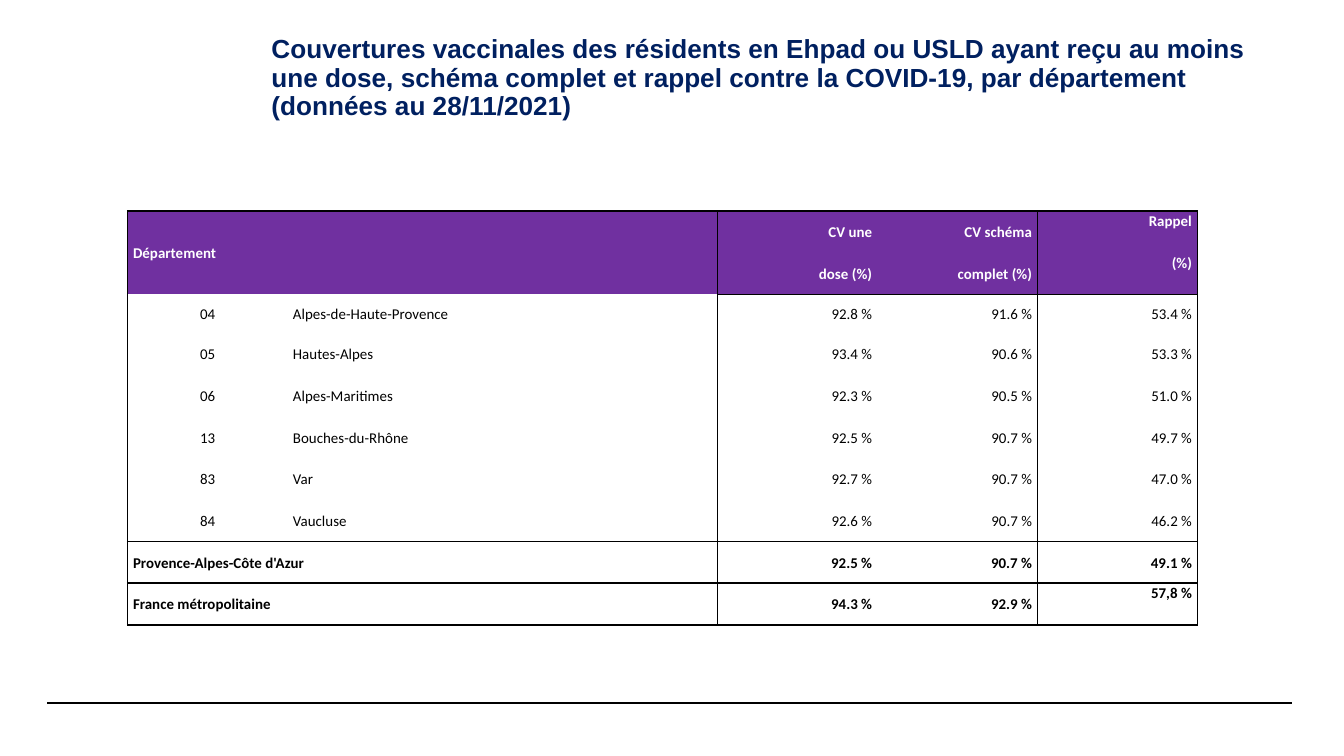
from lxml.etree import SubElement
from pptx import Presentation
from pptx.dml.color import RGBColor
from pptx.enum.shapes import MSO_CONNECTOR
from pptx.enum.text import MSO_ANCHOR as Anchor, PP_ALIGN as Align
from pptx.oxml.ns import qn
from pptx.util import Inches, Pt

THEME = {
    "black": RGBColor.from_string("000000"),
    "white": RGBColor.from_string("FFFFFF"),
    "navy": RGBColor.from_string("002060"),
    "purple": RGBColor.from_string("7030A0"),
    "title_font": "Arial",
    "title_size": Pt(14),
    "table_font": "Calibri",
    "table_size": Pt(8),
    "rule_width": Pt(0.8),
    "border_width": Pt(1),
}


def set_format(target, values):
    for name, value in values.items():
        setattr(target, name, value)


def set_border(cell, side, visible):
    """Draw or clear one side (L, R, T or B); call in that order, before the fill."""
    line = SubElement(cell._tc.get_or_add_tcPr(), qn(f"a:ln{side}"),
                      w=str(THEME["border_width"]))
    if visible:
        fill = SubElement(line, qn("a:solidFill"))
        SubElement(fill, qn("a:srgbClr"), val=str(THEME["black"]))
    else:
        SubElement(line, qn("a:noFill"))


presentation = Presentation()
# Widescreen, 16:9
set_format(presentation, {"slide_width": Inches(10), "slide_height": Inches(10) * 9 // 16})
slide = presentation.slides.add_slide(presentation.slide_layouts[6])

# Footer rules
for left in (0.35, 0.39):
    rule = slide.shapes.add_connector(
        MSO_CONNECTOR.STRAIGHT, Inches(left), Inches(5.23), Inches(left + 9.22), Inches(5.23))
    rule.line.color.rgb = THEME["black"]
    rule.line.width = THEME["rule_width"]
    SubElement(rule._element.spPr, qn("a:effectLst"))

# Title
title = slide.shapes.add_textbox(Inches(1.93), Inches(0.29), Inches(7.64), Inches(0.59))
set_format(title.text_frame, {
    "word_wrap": True, "vertical_anchor": Anchor.MIDDLE,
    "margin_left": Inches(0.09), "margin_right": Inches(0.07),
    "margin_top": Inches(0.04), "margin_bottom": Inches(0.04),
})
paragraph = title.text_frame.paragraphs[0]
paragraph.line_spacing = 0.9
run = paragraph.add_run()
run.text = ("Couvertures vaccinales des résidents en Ehpad ou USLD ayant reçu au moins "
            "une dose, schéma complet et rappel contre la COVID-19, par département "
            "(données au 28/11/2021)")
set_format(run.font, {"name": THEME["title_font"], "size": THEME["title_size"], "bold": True})
run.font.color.rgb = THEME["navy"]

# Coverage table
rows = [
    ("Département", "", "CV une", "CV schéma", "Rappel"),
    ("", "", "dose (%)", "complet (%)", "(%)"),
    ("04", "Alpes-de-Haute-Provence", "92.8 %", "91.6 %", "53.4 %"),
    ("05", "Hautes-Alpes", "93.4 %", "90.6 %", "53.3 %"),
    ("06", "Alpes-Maritimes", "92.3 %", "90.5 %", "51.0 %"),
    ("13", "Bouches-du-Rhône", "92.5 %", "90.7 %", "49.7 %"),
    ("83", "Var", "92.7 %", "90.7 %", "47.0 %"),
    ("84", "Vaucluse", "92.6 %", "90.7 %", "46.2 %"),
    ("Provence-Alpes-Côte d'Azur", "", "92.5 %", "90.7 %", "49.1 %"),
    ("France métropolitaine", "", "94.3 %", "92.9 %", "57,8 %"),
]
column_widths = [1.19, 3.2, 1.19, 1.19, 1.19]
header_rows, first_total = 2, 8
vertical_edges = {0, 2, 4, 5}
horizontal_edges = {0, header_rows, first_total, 9, 10}
top_anchored = {(0, 4), (1, 4), (9, 4)}

table = slide.shapes.add_table(
    len(rows), len(column_widths), Inches(0.95), Inches(1.57),
    Inches(sum(column_widths)), Inches(3.08)).table
set_format(table, {"first_row": False, "horz_banding": False})
for column, width in zip(table.columns, column_widths):
    column.width = Inches(width)
for index, table_row in enumerate(table.rows):
    table_row.height = Inches(0.29 if index == header_rows else 0.31)

table.cell(0, 0).merge(table.cell(1, 1))
for total in range(first_total, len(rows)):
    table.cell(total, 0).merge(table.cell(total, 1))

for r, texts in enumerate(rows):
    is_header = r < header_rows
    is_department = header_rows <= r < first_total
    text_color = THEME["white" if is_header else "black"]
    for c, text in enumerate(texts):
        cell = table.cell(r, c)
        right = c + (cell.span_width if cell.is_merge_origin else 1)
        bottom = r + (cell.span_height if cell.is_merge_origin else 1)
        # The header's lower line starts after the department columns.
        edges = horizontal_edges if c > 1 else horizontal_edges - {header_rows}
        set_border(cell, "L", c in vertical_edges)
        set_border(cell, "R", right in vertical_edges)
        set_border(cell, "T", r in edges)
        set_border(cell, "B", bottom in edges)
        if is_header:
            cell.fill.solid()
            cell.fill.fore_color.rgb = THEME["purple"]
        else:
            cell.fill.background()
        set_format(cell, {
            "margin_left": Inches(0.04), "margin_right": Inches(0.04),
            "margin_top": 0, "margin_bottom": 0,
            "vertical_anchor": Anchor.TOP if (r, c) in top_anchored else Anchor.MIDDLE,
        })
        if cell.is_spanned:
            continue
        paragraph = cell.text_frame.paragraphs[0]
        paragraph.line_spacing = 1.07
        if c > 1:
            paragraph.alignment = Align.RIGHT
        elif c == 0 and is_department:
            paragraph.alignment = Align.CENTER
        else:
            paragraph.alignment = Align.LEFT
        run = paragraph.add_run()
        run.text = text
        set_format(run.font, {
            "name": THEME["table_font"], "size": THEME["table_size"],
            "bold": not is_department})
        run.font.color.rgb = text_color

presentation.save("out.pptx")
